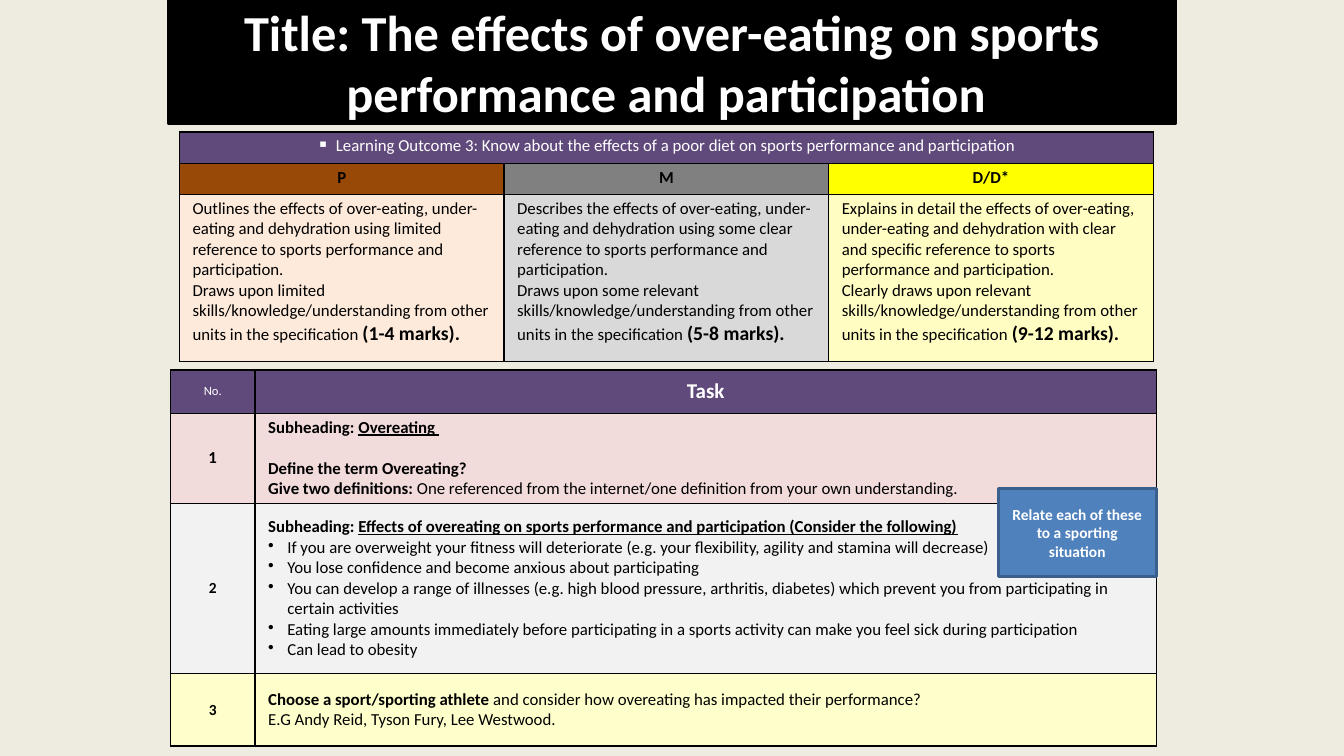
"""Build a slide on how over-eating affects sports performance."""
from lxml import etree
from pptx import Presentation
from pptx import util as u
from pptx.dml.color import RGBColor
from pptx.enum import shapes, text
from pptx.oxml import ns

PX = 9144
FONT = "Calibri"
BLACK = RGBColor(0x00, 0x00, 0x00)
WHITE = RGBColor(0xFF, 0xFF, 0xFF)
CREAM = RGBColor(0xEE, 0xEC, 0xE1)
PURPLE = RGBColor(0x60, 0x4A, 0x7B)
BROWN = RGBColor(0x98, 0x48, 0x07)
GREY = RGBColor(0x80, 0x80, 0x80)
YELLOW = RGBColor(0xFF, 0xFF, 0x00)
PEACH = RGBColor(0xFD, 0xEA, 0xDA)
SILVER = RGBColor(0xD9, 0xD9, 0xD9)
LEMON = RGBColor(0xFF, 0xFD, 0xC1)
ROSE = RGBColor(0xF2, 0xDC, 0xDB)
PALE = RGBColor(0xF2, 0xF2, 0xF2)
STRAW = RGBColor(0xFF, 0xFF, 0xCC)
BLUE = RGBColor(0x4F, 0x81, 0xBD)
NAVY = RGBColor(0x3A, 0x5F, 0x8C)

GRADES = [
    ("P", BROWN, PEACH, "Outlines", "using limited", "Draws upon limited", "1-4"),
    ("M", GREY, SILVER, "Describes", "using some clear",
     "Draws upon some relevant", "5-8"),
    ("D/D*", YELLOW, LEMON, "Explains in detail", "with clear and specific",
     "Clearly draws upon relevant", "9-12"),
]
EFFECTS = [
    "If you are overweight your fitness will deteriorate "
    "(e.g. your flexibility, agility and stamina will decrease)",
    "You lose confidence and become anxious about participating",
    "You can develop a range of illnesses (e.g. high blood pressure, arthritis, "
    "diabetes) which prevent you from participating in certain activities",
    "Eating large amounts immediately before participating in a sports activity "
    "can make you feel sick during participation",
    "Can lead to obesity",
]


def px(*vals):
    """Turn px lengths into EMU."""
    return [u.Emu(val * PX) for val in vals]


def run(words, bold=False, under=False, size=None):
    """Describe one stretch of text."""
    return words, bold, under, size


def para(*runs, size=12, color=BLACK, mid=False, mark=None, gap=0):
    """Describe one paragraph."""
    return runs, size, color, mid, mark, gap


def head(words, size=12, color=BLACK, bold=True, mark=None):
    """Describe a centred paragraph of one run."""
    return para(run(words, bold), size=size, color=color, mid=True, mark=mark)


def bullet(par, mark):
    """Give a paragraph a hanging bullet."""
    props = par._p.get_or_add_pPr()
    props.set("marL", str(19 * PX))
    props.set("indent", str(-19 * PX))
    etree.SubElement(props, ns.qn("a:buChar")).set("char", mark)


def write(frame, paras):
    """Fill a text frame with described paragraphs."""
    for i, (runs, size, color, mid, mark, gap) in enumerate(paras):
        par = frame.add_paragraph() if i else frame.paragraphs[0]
        par.alignment = text.PP_ALIGN.CENTER if mid else text.PP_ALIGN.LEFT
        if gap:
            par.space_before = u.Pt(gap)
        if mark:
            bullet(par, mark)
        par.font.name, par.font.size = FONT, u.Pt(size)
        par.font.color.rgb = color
        for words, bold, under, big in runs:
            part = par.add_run()
            part.text = words
            part.font.bold, part.font.underline = bold, under
            if big:
                part.font.size = u.Pt(big)


def border(cell):
    """Draw a thin black line on each side of a cell."""
    props = cell._tc.get_or_add_tcPr()
    for side in ("lnL", "lnR", "lnT", "lnB"):
        line = etree.SubElement(props, ns.qn("a:" + side), w=str(u.Pt(1)))
        fill = etree.SubElement(line, ns.qn("a:solidFill"))
        etree.SubElement(fill, ns.qn("a:srgbClr"), val=str(BLACK))


def grid(slide, box, cols, rows, cells, anchor):
    """Add a table of (fill, paragraphs) cells."""
    frame = slide.shapes.add_table(len(rows), len(cols), *px(*box))
    table = frame.table
    table.first_row = table.horz_banding = False
    for col, wide in zip(table.columns, px(*cols)):
        col.width = wide
    for row, high in zip(table.rows, px(*rows)):
        row.height = high
    for r, line in enumerate(cells):
        for c, (fill, paras) in enumerate(line):
            cell = table.cell(r, c)
            border(cell)
            cell.fill.solid()
            cell.fill.fore_color.rgb = fill
            cell.vertical_anchor = anchor
            cell.margin_left, cell.margin_right = px(13, 13)
            cell.margin_top, cell.margin_bottom = px(4, 4)
            write(cell.text_frame, paras)
    return table


def panel(shape, fill, edge, paras):
    """Paint a shape and centre its text."""
    shape.fill.solid()
    shape.fill.fore_color.rgb = fill
    shape.line.color.rgb = edge
    shape.line.width = u.Pt(2)
    frame = shape.text_frame
    frame.word_wrap = True
    frame.auto_size = text.MSO_AUTO_SIZE.NONE
    frame.vertical_anchor = text.MSO_ANCHOR.MIDDLE
    write(frame, paras)


def outcome(slide):
    """Add the table of grade descriptions."""
    top = [head("Learning Outcome 3: Know about the effects of a poor diet on "
                "sports performance and participation", 12, WHITE, False, "▪")]
    names, notes = [], []
    for name, dark, light, verb, how, draws, marks in GRADES:
        names.append((dark, [head(name)]))
        notes.append((light, [
            para(run(f"{verb} the effects of over-eating, under-eating and "
                     f"dehydration {how} reference to sports performance "
                     "and participation.")),
            para(run(f"{draws} skills/knowledge/understanding from other "
                     "units in the specification "),
                 run(f"({marks} marks).", True, size=14))]))
    cells = [[(PURPLE, top), (PURPLE, []), (PURPLE, [])], names, notes]
    table = grid(slide, (178, 131, 966, 228), [322] * 3, [31, 31, 166],
                 cells, text.MSO_ANCHOR.TOP)
    table.cell(0, 0).merge(table.cell(0, 2))


def tasks(slide):
    """Add the table of numbered tasks."""
    define = [
        para(run("Subheading: ", True), run("Overeating ", True, True)),
        para(run("Define the term Overeating?", True), gap=14.6),
        para(run("Give two definitions: ", True),
             run("One referenced from the internet/one definition from "
                 "your own understanding."))]
    effects = [
        para(run("Subheading: ", True),
             run("Effects of overeating on sports performance and "
                 "participation (Consider the following)", True, True))]
    effects += [para(run(item), mark="•") for item in EFFECTS]
    choose = [
        para(run("Choose a sport/sporting athlete ", True),
             run("and consider how overeating has impacted their performance?")),
        para(run("E.G Andy Reid, Tyson Fury, Lee Westwood."))]
    cells = [[(PURPLE, [head("No.", 9, WHITE, False)]),
              (PURPLE, [head("Task", 15, WHITE)])]]
    jobs = [(ROSE, 12, define), (PALE, 11, effects), (STRAW, 11, choose)]
    for num, (fill, size, paras) in enumerate(jobs, 1):
        cells.append([(fill, [head(str(num), size)]), (fill, paras)])
    grid(slide, (169, 367, 978, 371), [84, 894], [43, 83, 169, 72],
         cells, text.MSO_ANCHOR.MIDDLE)


def main():
    """Build and save the slide."""
    deck = Presentation()
    deck.slide_width, deck.slide_height = px(1333, 750)
    slide = deck.slides.add_slide(deck.slide_layouts[5])
    slide.background.fill.solid()
    slide.background.fill.fore_color.rgb = CREAM
    title = slide.shapes.title
    title.left, title.top, title.width, title.height = px(167, 0, 999, 123)
    panel(title, BLACK, BLACK, [head(
        "Title: The effects of over-eating on sports performance and "
        "participation ", 36, WHITE)])
    outcome(slide)
    tasks(slide)
    note = slide.shapes.add_shape(shapes.MSO_SHAPE.RECTANGLE,
                                  *px(990, 485, 157, 87))
    note.shadow.inherit = False
    panel(note, BLUE, NAVY, [head(
        "Relate each of these to a sporting situation", 11, WHITE)])
    deck.save("out.pptx")


if __name__ == "__main__":
    main()
